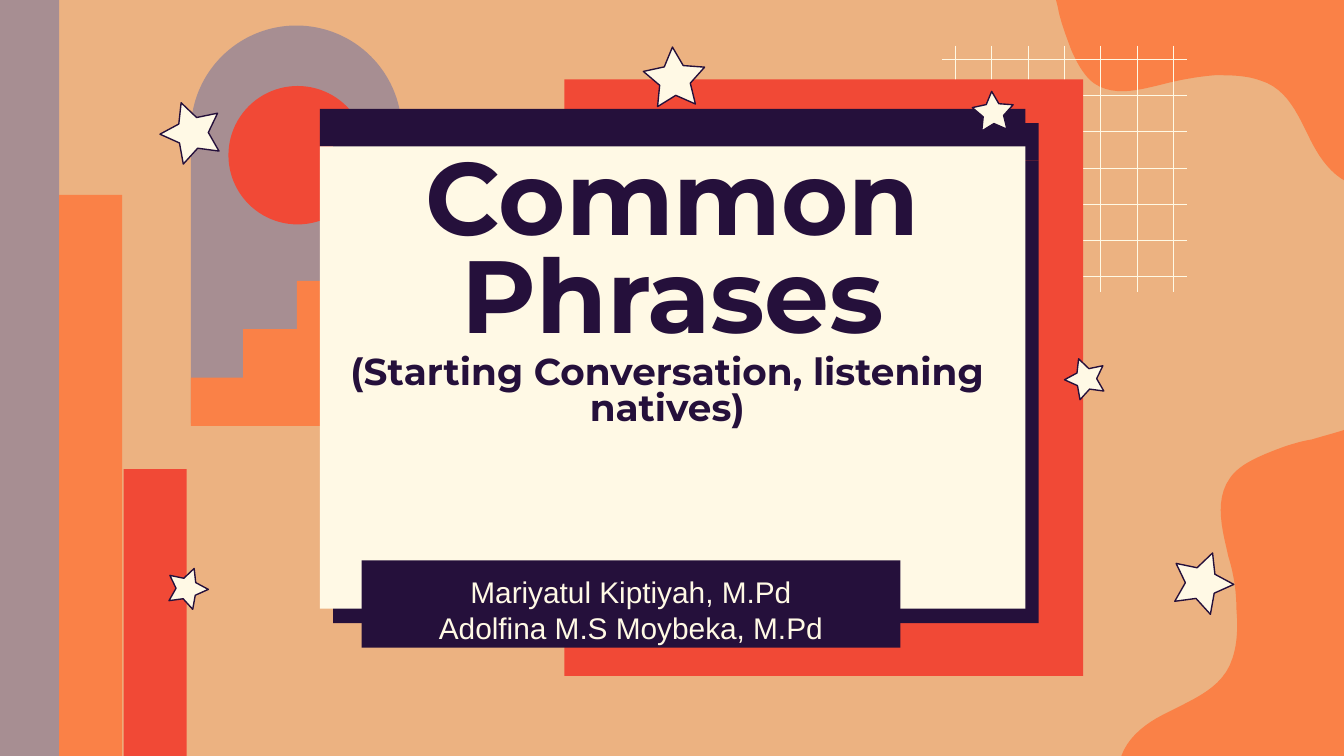
from math import cos, radians, sin

from lxml import etree
from pptx import Presentation
from pptx.dml.color import RGBColor
from pptx.enum import shapes, text
from pptx.oxml.ns import qn
from pptx.util import Inches, Pt

SAND, GREY, RED = "ECB281", "A78E92", "F14936"
ORANGE, CREAM, NAVY = "FA8147", "FFF9E5", "25103B"
KIND = shapes.MSO_SHAPE

TITLE = "Common Phrases"
SUBTITLE = "(Starting Conversation, listening natives)"
AUTHORS = ["Mariyatul Kiptiyah, M.Pd", "Adolfina M.S Moybeka, M.Pd"]

# preset, box (left, top, width, height), colour
ARCH = [
    (KIND.ROUND_2_SAME_RECTANGLE, (1.42, 0.19, 1.57, 2.96), GREY),
    (KIND.OVAL, (1.7, 0.64, 1.03, 1.03), RED),
]
RED_PANEL = (KIND.RECTANGLE, (4.2, 0.59, 3.86, 4.44), RED)
BARS = [
    (KIND.RECTANGLE, (-0.03, 0, 0.47, 5.64), GREY),
    (KIND.RECTANGLE, (0.44, 1.45, 0.47, 4.19), ORANGE),
    (KIND.RECTANGLE, (0.92, 3.49, 0.47, 2.15), RED),
]
WINDOW = [
    (KIND.RECTANGLE, (2.38, 0.81, 5.25, 0.28), NAVY),
    (KIND.RECTANGLE, (2.38, 1.09, 5.25, 3.44), CREAM),
]

# Outlines: a pair is a corner, six numbers are a Bezier curve
STAIRS = [(2.6, 1.73), (2.6, 2.09), (2.21, 2.09), (2.21, 2.45), (1.81, 2.45),
          (1.81, 2.81), (1.42, 2.81), (1.42, 3.17), (2.99, 3.17), (2.99, 1.73)]
TOP_BLOB = [
    (10.15, 1.39), (9.95, 1.37, 9.83, 1.2, 9.75, 1.04),
    (9.66, 0.86, 9.58, 0.66, 9.38, 0.6), (9.27, 0.56, 9.16, 0.56, 9.04, 0.56),
    (8.92, 0.57, 8.8, 0.59, 8.68, 0.62), (8.51, 0.66, 8.3, 0.73, 8.14, 0.62),
    (8.06, 0.56, 8.01, 0.46, 7.97, 0.37), (7.93, 0.26, 7.89, 0.16, 7.87, 0.05),
    (7.84, -0.07, 7.81, -0.2, 7.76, -0.32), (9.94, -0.32),
    (10.06, -0.32, 10.15, -0.22, 10.15, -0.1),
]
BOTTOM_BLOB = [
    (8.32, 5.73), (8.34, 5.51, 8.52, 5.38, 8.69, 5.3),
    (8.88, 5.2, 9.1, 5.12, 9.17, 4.9), (9.21, 4.78, 9.21, 4.65, 9.2, 4.53),
    (9.2, 4.4, 9.18, 4.27, 9.14, 4.14), (9.1, 3.96, 9.03, 3.73, 9.15, 3.56),
    (9.21, 3.47, 9.32, 3.42, 9.41, 3.38), (9.53, 3.33, 9.64, 3.29, 9.76, 3.27),
    (9.89, 3.23, 10.03, 3.2, 10.15, 3.14), (10.15, 5.5),
    (10.15, 5.63, 10.05, 5.73, 9.92, 5.73),
]

# centre x, centre y, radius, tilt in degrees
STARS = [(1.39, 4.38, 0.16, 20), (1.43, 0.99, 0.24, -20), (8.94, 4.34, 0.24, 20),
         (8.08, 2.82, 0.16, -20), (5.02, 0.59, 0.24, -4)]
WINDOW_STAR = (7.39, 0.84, 0.16, -4)

presentation = Presentation()
presentation.slide_width = Inches(10)
presentation.slide_height = presentation.slide_width * 9 // 16
slide = presentation.slides.add_slide(presentation.slide_layouts[0])


def rgb(colour):
    return RGBColor.from_string(colour)


def paint(shape, fill, line=None):
    shape.shadow.inherit = False
    shape.fill.solid()
    shape.fill.fore_color.rgb = rgb(fill)
    if line:
        shape.line.color.rgb = rgb(line)
        shape.line.width = Pt(0.75)
    else:
        shape.line.fill.background()


def place(shape, box):
    shape.left, shape.top, shape.width, shape.height = map(Inches, box)


def add_preset(preset, box, colour):
    shape = slide.shapes.add_shape(preset, *map(Inches, box))
    paint(shape, colour)
    return shape


def flatten(outline, steps=12):
    """Turn corners and Bezier curves into a list of points."""
    points = []
    for part in outline:
        if len(part) == 2:
            points.append(part)
            continue
        controls = [points[-1], part[:2], part[2:4], part[4:]]
        for step in range(1, steps + 1):
            t = step / steps
            weights = ((1 - t) ** 3, 3 * t * (1 - t) ** 2, 3 * t * t * (1 - t), t ** 3)
            points.append(tuple(sum(w * c[axis] for w, c in zip(weights, controls))
                                for axis in (0, 1)))
    return points


def add_outline(points, fill, line=None):
    corners = [(Inches(x), Inches(y)) for x, y in points]
    builder = slide.shapes.build_freeform(*corners[0])
    builder.add_line_segments(corners[1:], close=True)
    paint(builder.convert_to_shape(), fill, line)


def add_star(x, y, radius, tilt):
    points = []
    for corner in range(10):
        reach = radius / 2 if corner % 2 else radius
        angle = radians(tilt + 36 * corner)
        points.append((x + reach * sin(angle), y - reach * cos(angle)))
    add_outline(points, CREAM, NAVY)


def add_grid_line(*ends):
    line = slide.shapes.add_connector(shapes.MSO_CONNECTOR.STRAIGHT, *map(Inches, ends))
    line.line.color.rgb = rgb(CREAM)
    line.line.width = Pt(0.5)
    etree.SubElement(line._element.spPr, qn("a:effectLst"))


def add_hard_shadow(shape):
    effects = shape._element.spPr.find(qn("a:effectLst"))
    shadow = etree.SubElement(effects, qn("a:outerShdw"), blurRad="0", dist=str(Pt(10.5)),
                              dir=str(47 * 60000), algn="bl", rotWithShape="0")
    etree.SubElement(shadow, qn("a:srgbClr"), val=NAVY)


def write(shape, lines, font, size, colour, anchor, bold=False, spacing=1.0):
    frame = shape.text_frame
    frame.word_wrap = True
    frame.auto_size = text.MSO_AUTO_SIZE.NONE
    frame.vertical_anchor = anchor
    frame.margin_left = frame.margin_right = Inches(0.1)
    frame.margin_top = frame.margin_bottom = Inches(0.1)
    for index, line in enumerate(lines):
        paragraph = frame.add_paragraph() if index else frame.paragraphs[0]
        paragraph.alignment = text.PP_ALIGN.CENTER
        paragraph.line_spacing = spacing
        paragraph.space_before = Pt(0)
        run = paragraph.add_run()
        run.text = line
        run.font.name, run.font.size, run.font.bold = font, Pt(size), bold
        run.font.color.rgb = rgb(colour)


slide.background.fill.solid()
slide.background.fill.fore_color.rgb = rgb(SAND)

arch, sun = [add_preset(*item) for item in ARCH]
arch.adjustments[0] = 0.5
add_outline(STAIRS, ORANGE)
add_outline(flatten(TOP_BLOB), ORANGE)
for i in range(7):
    x, y = 7.11 + 0.27 * i, 0.44 + 0.27 * i
    add_grid_line(x, 0.34, x, 2.17)
    add_grid_line(7.01, y, 8.83, y)
add_preset(*RED_PANEL)
add_outline(flatten(BOTTOM_BLOB), ORANGE)
for bar in BARS:
    add_preset(*bar)
for star in STARS:
    add_star(*star)
for pane in WINDOW:
    add_hard_shadow(add_preset(*pane))

title, authors = slide.placeholders
for placeholder in (title, authors):
    slide.shapes._spTree.append(placeholder._element)  # bring to front
place(title, (2.55, 1.19, 4.91, 1.54))
write(title, [TITLE], "Montserrat", 55, NAVY, text.MSO_ANCHOR.BOTTOM, True, 0.8)
place(authors, (2.69, 4.17, 4.01, 0.65))
paint(authors, NAVY)
write(authors, AUTHORS, "Arial", 16, CREAM, text.MSO_ANCHOR.TOP)

add_star(*WINDOW_STAR)
subtitle = slide.shapes.add_textbox(*map(Inches, (2.22, 2.5, 5.49, 0.79)))
write(subtitle, [SUBTITLE], "Montserrat", 20, NAVY, text.MSO_ANCHOR.BOTTOM, True, 0.8)

presentation.save("out.pptx")
